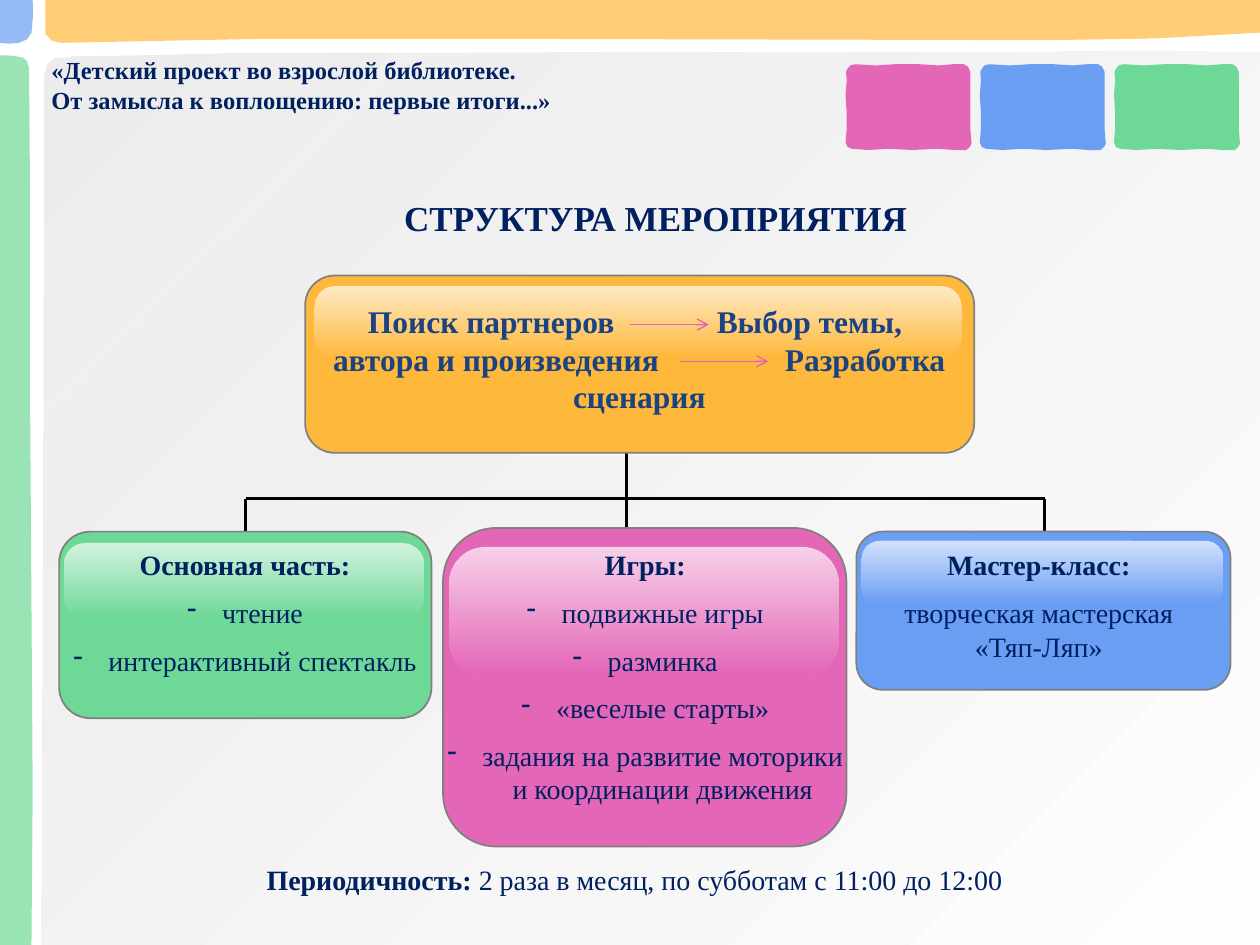
import pptx
import pptx.dml.color
import pptx.enum.shapes
import pptx.enum.text
import pptx.oxml.ns
import pptx.util
from lxml import etree

Pt = pptx.util.Pt
qn = pptx.oxml.ns.qn
ALIGN = pptx.enum.text.PP_ALIGN
ANCHOR = pptx.enum.text.MSO_ANCHOR
ROUNDED = pptx.enum.shapes.MSO_SHAPE.ROUNDED_RECTANGLE
STRAIGHT = pptx.enum.shapes.MSO_CONNECTOR.STRAIGHT

COLORS = {
    "amber": "FEB93C", "green": "6ED896", "blue": "699EF3", "pink": "E466B7",
    "white": "FFFFFF", "pale": "E6E6E6", "outline": "808080", "black": "000000",
    "arrow": "E261B4", "navy": "002060", "steps": "1C4381",
}


def rgb(name):
    return pptx.dml.color.RGBColor.from_string(COLORS[name])


prs = pptx.Presentation()
prs.slide_width, prs.slide_height = Pt(720), Pt(540)
slide = prs.slides.add_slide(prs.slide_layouts[6])
shapes = slide.shapes


def add_text(text, left, top, width, height, size=16, color="navy", align=ALIGN.CENTER,
             anchor=ANCHOR.TOP, wrap=True, bold_first=True, bold_rest=False,
             gap=8, dashes=False, tabs=()):
    """Each line is a paragraph; "|" parts a bold lead from the rest of its line.

    tabs holds the tab stops of each line.
    """
    frame = shapes.add_textbox(Pt(left), Pt(top), Pt(width), Pt(height)).text_frame
    frame.word_wrap = wrap
    frame.vertical_anchor = anchor
    for i, line in enumerate(text.split("\n")):
        paragraph = frame.paragraphs[0] if i == 0 else frame.add_paragraph()
        props = paragraph._p.get_or_add_pPr()
        if dashes and i:
            props.set("marL", str(Pt(20)))
            props.set("indent", str(-Pt(20)))
            etree.SubElement(props, qn("a:buChar"), char="-")
        if i < len(tabs) and tabs[i]:
            stops = etree.SubElement(props, qn("a:tabLst"))
            for stop in tabs[i]:
                etree.SubElement(stops, qn("a:tab"), pos=str(Pt(stop)), algn="l")
            paragraph.alignment = ALIGN.LEFT
        else:
            paragraph.alignment = align
        if i:
            paragraph.space_before = Pt(gap)
        for j, part in enumerate(line.split("|")):
            run = paragraph.add_run()
            run.text = part
            run.font.name = "Times New Roman"
            run.font.size = Pt(size)
            run.font.bold = bold_first if i == j == 0 else bold_rest
            run.font.color.rgb = rgb(color)


# Background: panel and frame bars with wavy edges, then three tiles
panel = [(720, 540), (720, 30), (640, 29), (547, 30), (312, 30), (130, 30.5), (41, 32.4),
         (31, 33.6), (27, 37), (25.5, 43), (25.2, 53), (25.2, 131), (24.5, 364), (23.8, 540)]
top_bar = [(720, 0), (720, 18.7), (660, 22), (599, 23), (307, 22.3), (146, 22.3),
           (35.3, 24.5), (30, 23.5), (25.9, 19.4), (25.9, 0)]
left_bar = [(0, 540), (18, 540), (18.7, 452), (17.3, 238), (17.3, 120), (16.6, 39),
            (15.5, 35), (13, 33), (7, 31.8), (0, 31.7)]
corner = [(0, 0), (18.7, 0), (18.9, 9), (18, 18.7), (15.5, 22.5), (10.8, 24.5),
          (5, 25), (0, 24.5)]
tile = [(1.4, 2.9), (3, 1.2), (5.8, 0.7), (17.3, 1.4), (28, 0.7), (42.5, 0.7), (53.3, 1.4),
        (61.2, 0.7), (67.7, 0.7), (70, 2.2), (71.3, 5), (71.3, 15), (71.3, 37.4), (72, 46),
        (71, 48), (69, 49.7), (62, 49.7), (52.6, 49), (38.2, 49.7), (24.5, 49), (13, 49.7),
        (3.6, 49), (1.2, 48), (0, 45.4), (0.7, 37.4), (0.7, 28.8), (0, 18), (0.7, 10), (0.3, 5)]
outlines = [(panel, None, 70), (top_bar, "amber", 70), (left_bar, "green", 70),
            (corner, "blue", 70)]
for i, color in enumerate(["pink", "blue", "green"]):
    outlines.append(([(483.2 + 76.7 * i + x, 36 + y) for x, y in tile], color, 100))

for points, color, opacity in outlines:
    points = [(Pt(x), Pt(y)) for x, y in points]
    builder = shapes.build_freeform(*points[0])
    builder.add_line_segments(points[1:])
    blob = builder.convert_to_shape()
    blob.shadow.inherit = False
    blob.line.fill.background()
    if color:
        blob.fill.solid()
        blob.fill.fore_color.rgb = rgb(color)
    else:
        blob.fill.gradient()
        blob.fill.gradient_angle = 315
        for stop, shade in zip(blob.fill.gradient_stops, ["pale", "white"]):
            stop.color.rgb = rgb(shade)
    if opacity < 100:
        first_color = next(blob._element.spPr.iter(qn("a:srgbClr")))
        etree.SubElement(first_color, qn("a:alpha"), val=str(opacity * 1000))

# Tree lines, drawn before the boxes, and step arrows, drawn after the text
tree = [(358, 249, 358, 307), (140.4, 285, 596.9, 285),
        (140.4, 285, 140.4, 305), (596.9, 285, 596.9, 305)]
arrows = [(360, 185.5, 405, 185.5), (388.5, 206.5, 439, 206.5)]
connectors = []
for ends in tree + arrows:
    link = shapes.add_connector(STRAIGHT, *[Pt(v) for v in ends])
    link.line.color.rgb = rgb("arrow" if ends in arrows else "black")
    link.line.width = Pt(0.75 if ends in arrows else 1.5)
    if ends in arrows:
        etree.SubElement(link.line._get_or_add_ln(), qn("a:tailEnd"), type="arrow")
        connectors.append(link)
    etree.SubElement(link._element.spPr, qn("a:effectLst"))

# Glossy boxes: color, box, highlight
boxes = [
    ("green", (33.8, 303.8, 212.8, 106.6), (36.7, 310.3, 205.5, 43.2)),
    ("blue", (489.4, 303.8, 213.8, 90.4), (492.5, 309, 206.5, 36.7)),
    ("pink", (253.2, 301.7, 230.5, 182), (256.7, 312.5, 222.5, 74.2)),
    ("amber", (174.4, 157.5, 382.3, 101.3), (180, 163.5, 369.3, 41)),
]
for color, box_area, gloss_area in boxes:
    box = shapes.add_shape(ROUNDED, *[Pt(v) for v in box_area])
    box.adjustments[0] = 0.167
    box.fill.solid()
    box.fill.fore_color.rgb = rgb(color)
    box.line.color.rgb = rgb("outline")
    box.line.width = Pt(1)
    gloss = shapes.add_shape(ROUNDED, *[Pt(v) for v in gloss_area])
    gloss.adjustments[0] = 0.284
    gloss.line.fill.background()
    gloss.fill.gradient()
    gloss.fill.gradient_angle = 270
    for stop, shade in zip(gloss.fill.gradient_stops, ["white", color]):
        stop.color.rgb = rgb(shade)
    for stop_color in gloss._element.spPr.iter(qn("a:srgbClr")):
        etree.SubElement(stop_color, qn("a:alpha"), val="70000")
    box.shadow.inherit = gloss.shadow.inherit = False

add_text("Мастер-класс:\nтворческая мастерская «Тяп-Ляп»", 489.6, 309.6, 208, 75)
add_text("Основная часть:\nчтение\nинтерактивный спектакль",
         33.8, 309.6, 212.4, 85, dashes=True)
add_text("Игры:\nподвижные игры\nразминка\n«веселые старты»\n"
         "задания на развитие моторики и координации движения",
         247.7, 309.6, 242, 162.7, dashes=True)
add_text("\tПоиск партнеров\tВыбор темы,\n\tавтора и произведения\tРазработка\nсценария",
         174.2, 168.5, 382.3, 72.7, size=18, color="steps", anchor=ANCHOR.MIDDLE,
         bold_rest=True, gap=0, tabs=[(29, 228.3), (9, 267.2)])
# The first tabbed line holds one bold run, as do the lines after it
add_text("«Детский проект во взрослой библиотеке.\nОт замысла к воплощению: первые итоги...»",
         22.3, 28.1, 476, 48, size=14, align=ALIGN.LEFT, bold_rest=True, gap=0)
add_text("СТРУКТУРА МЕРОПРИЯТИЯ", 223.9, 108.7, 304.6, 31.7, size=20,
         align=ALIGN.LEFT, wrap=False)
add_text("Периодичность: |2 раза в месяц, по субботам с 11:00 до 12:00",
         16.6, 489.6, 692, 26.6)

for arrow in connectors:
    shapes._spTree.append(arrow._element)

prs.save("out.pptx")
